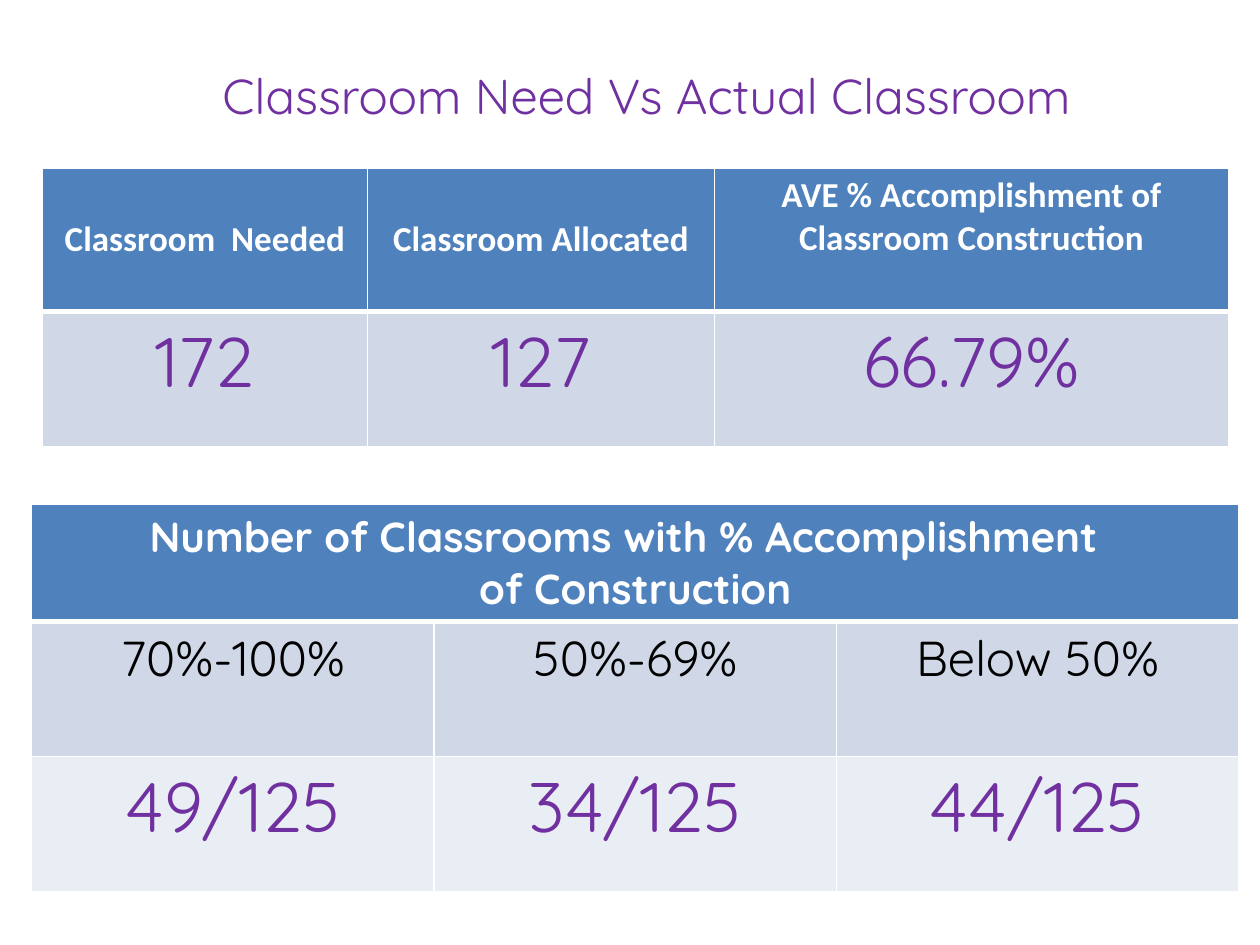
"""Build the slide comparing classroom need with actual classrooms."""
from lxml.etree import SubElement
from pptx import Presentation
from pptx.dml.color import RGBColor
from pptx.enum.text import MSO_ANCHOR, PP_ALIGN
from pptx.oxml.ns import qn
from pptx.util import Cm, Pt

WHITE, BLACK, PURPLE = "FFFFFF", "000000", "7030A0"
BLUE, BAND, PALE = "4F81BD", "D0D8E8", "E9EDF4"


def rgb(value):
    return RGBColor.from_string(value)


class Deck:
    def __init__(self, prs):
        self.s = prs.slides.add_slide(prs.slide_layouts[5])
        self.font = "Quicksand"

    def text(self, tf, lines, size, color, bold=False, font=None):
        for i, line in enumerate(lines):
            p = tf.paragraphs[0] if i == 0 else tf.add_paragraph()
            p.alignment = PP_ALIGN.CENTER
            r = p.add_run()
            r.text = line
            r.font.name = font or self.font
            r.font.size = Pt(size)
            r.font.bold = bold
            r.font.color.rgb = rgb(color)

    def title(self, box, words, size, color):
        sp = self.s.shapes.title
        sp.left, sp.top, sp.width, sp.height = map(Cm, box)
        tf = sp.text_frame
        tf.word_wrap = True
        tf.vertical_anchor = MSO_ANCHOR.MIDDLE
        self.text(tf, [words], size, color)

    def borders(self, cell, top, bottom):
        tc_pr = cell._tc.get_or_add_tcPr()
        for side, width in (("L", 1), ("R", 1), ("T", top), ("B", bottom)):
            ln = SubElement(tc_pr, qn(f"a:ln{side}"), w=str(Pt(width)))
            fill = SubElement(ln, qn("a:solidFill"))
            SubElement(fill, qn("a:srgbClr"), val=WHITE)

    def table(self, left, top, widths, heights, fills):
        frame = self.s.shapes.add_table(
            len(heights), len(widths), Cm(left), Cm(top), Cm(sum(widths)), Cm(sum(heights)))
        tbl = frame.table
        tbl.horz_banding = False
        for col, width in zip(tbl.columns, widths):
            col.width = Cm(width)
        for i, (row, height, color) in enumerate(zip(tbl.rows, heights, fills)):
            row.height = Cm(height)
            for cell in row.cells:
                self.borders(cell, 3 if i == 1 else 1, 3 if i == 0 else 1)
                cell.fill.solid()
                cell.fill.fore_color.rgb = rgb(color)
        return tbl

    def row(self, tbl, index, words, size, color, **style):
        for cell, word in zip(tbl.rows[index].cells, words):
            self.text(cell.text_frame, [word], size, color, **style)


def main():
    prs = Presentation()
    prs.slide_width, prs.slide_height = Cm(25.4), Cm(19.05)
    deck = Deck(prs)
    deck.title((-1.47, -0.2, 29, 4.24), "Classroom Need Vs Actual Classroom", 28, PURPLE)

    need = deck.table(0.85, 3.39, [6.56, 6.99, 10.37], [2.89, 2.72], [BLUE, BAND])
    deck.row(need, 0, ["Classroom  Needed", "Classroom Allocated",
                       "AVE % Accomplishment of Classroom Construction"],
             20, WHITE, bold=True, font="Calibri")
    for col in (0, 1):
        need.cell(0, col).vertical_anchor = MSO_ANCHOR.MIDDLE
    deck.row(need, 1, ["172", "127", "66.79%"], 40, PURPLE)

    progress = deck.table(0.64, 10.16, [8.11] * 3, [2.32, 2.72, 2.72], [BLUE, BAND, PALE])
    head = progress.cell(0, 0)
    head.merge(progress.cell(0, 2))
    deck.text(head.text_frame,
              ["Number of Classrooms with % Accomplishment  ", "of Construction"],
              24, WHITE, bold=True)
    deck.row(progress, 1, ["70%-100%", "50%-69%", "Below 50%"], 28, BLACK)
    deck.row(progress, 2, ["49/125", "34/125", "44/125"], 40, PURPLE)

    prs.save("out.pptx")


if __name__ == "__main__":
    main()
